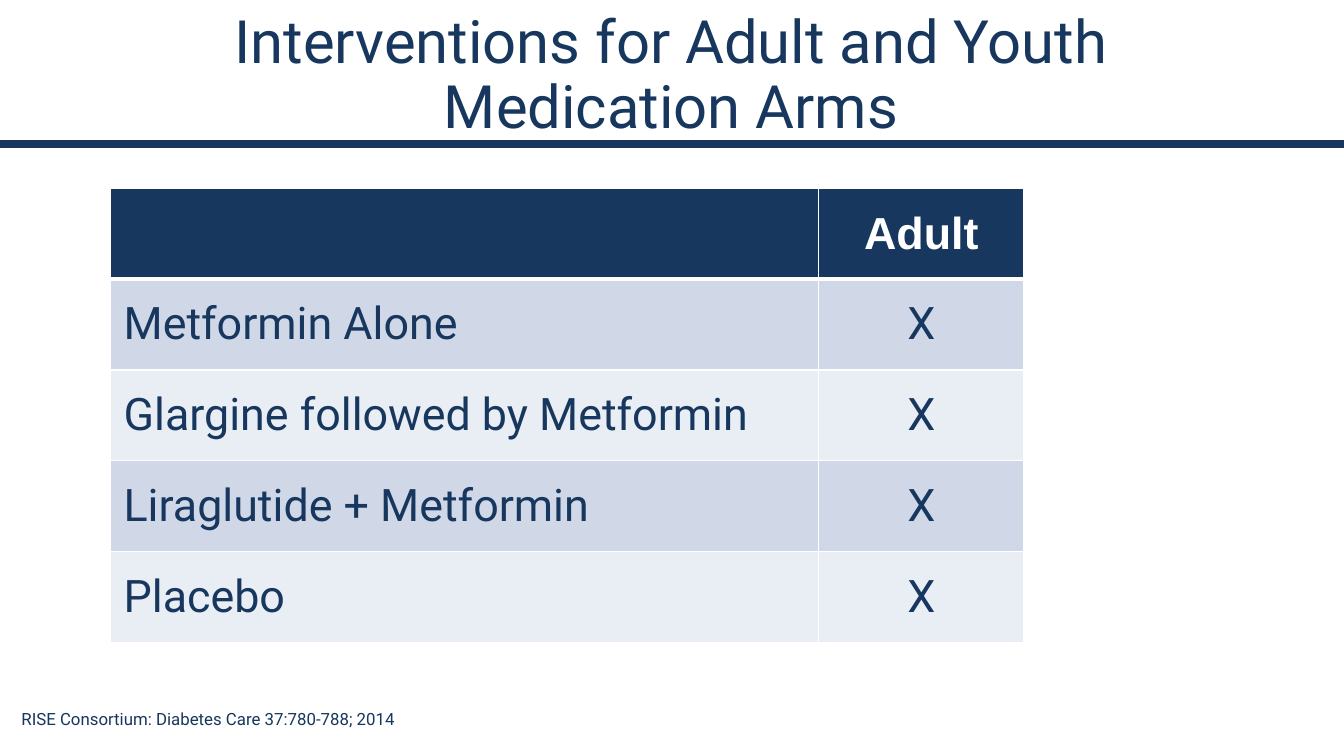
from lxml.etree import SubElement
from pptx import Presentation
from pptx.dml.color import RGBColor
from pptx.enum.shapes import MSO_CONNECTOR
from pptx.enum.text import MSO_ANCHOR, PP_ALIGN
from pptx.oxml.ns import qn
from pptx.util import Inches, Pt

TITLE = "Interventions for Adult and Youth Medication Arms"
SOURCE = "RISE Consortium: Diabetes Care 37:780-788; 2014"
ROWS = [
    ("", "Adult"),
    ("Metformin Alone", "X"),
    ("Glargine followed by Metformin", "X"),
    ("Liraglutide + Metformin", "X"),
    ("Placebo", "X"),
]
COL_WIDTHS = [5.27, 1.53]
TABLE_HEIGHT = 3.38
COLORS = {"navy": "17375E", "white": "FFFFFF", "odd": "D0D8E8", "even": "E9EDF4"}


def rgb(name):
    return RGBColor.from_string(COLORS[name])


def style(p, size, color="navy", font="Roboto", bold=False, align=PP_ALIGN.LEFT):
    p.alignment = align
    for r in p.runs:
        r.font.size = Pt(size)
        r.font.name = font
        r.font.bold = bold
        r.font.color.rgb = rgb(color)


def add_text(s, text, box, size, wrap=True, align=PP_ALIGN.LEFT):
    tf = s.shapes.add_textbox(*map(Inches, box)).text_frame
    tf.word_wrap = wrap
    tf.margin_left = tf.margin_right = Inches(0.08)
    tf.margin_top = tf.margin_bottom = Inches(0.04)
    tf.text = text
    style(tf.paragraphs[0], size, align=align)
    return tf


def add_borders(cell, widths):
    """Draw white cell edges; call before filling, as the schema puts lines first."""
    tcPr = cell._tc.get_or_add_tcPr()
    for side, width in widths.items():
        ln = SubElement(tcPr, qn(f"a:ln{side}"), w=str(Pt(width)))
        fill = SubElement(ln, qn("a:solidFill"))
        SubElement(fill, qn("a:srgbClr"), val=COLORS["white"])


def add_rule(s):
    rule = s.shapes.add_connector(
        MSO_CONNECTOR.STRAIGHT, 0, Inches(1.07), Inches(10.01), Inches(1.07))
    rule.line.color.rgb = rgb("navy")
    rule.line.width = Pt(4.5)
    SubElement(rule._element.spPr, qn("a:effectLst"))


def add_arms_table(s):
    table = s.shapes.add_table(
        len(ROWS), len(COL_WIDTHS), Inches(0.82), Inches(1.4),
        Inches(sum(COL_WIDTHS)), Inches(TABLE_HEIGHT)).table
    for column, width in zip(table.columns, COL_WIDTHS):
        column.width = Inches(width)
    for i, row in enumerate(ROWS):
        table.rows[i].height = Inches(TABLE_HEIGHT / len(ROWS))
        header = i == 0
        fill = "navy" if header else "odd" if i % 2 else "even"
        for j, text in enumerate(row):
            cell = table.cell(i, j)
            add_borders(cell, {"L": 1, "R": 1, "T": 3 if i == 1 else 1,
                               "B": 3 if header else 1})
            cell.fill.solid()
            cell.fill.fore_color.rgb = rgb(fill)
            cell.vertical_anchor = MSO_ANCHOR.MIDDLE
            cell.margin_left = cell.margin_right = Inches(0.1)
            cell.margin_top = cell.margin_bottom = Inches(0.04)
            cell.text_frame.text = text
            style(cell.text_frame.paragraphs[0], 24,
                  color="white" if header else "navy",
                  font="Arial" if header else "Roboto", bold=header,
                  align=PP_ALIGN.CENTER if j else PP_ALIGN.LEFT)


def main():
    prs = Presentation()
    prs.slide_width = Inches(10)
    prs.slide_height = prs.slide_width * 9 // 16
    s = prs.slides.add_slide(prs.slide_layouts[6])
    add_rule(s)
    title = add_text(s, TITLE, (0.64, 0.05, 8.71, 1.05), 32, align=PP_ALIGN.CENTER)
    title.paragraphs[0].line_spacing = 0.9
    add_text(s, SOURCE, (0.08, 5.23, 3.04, 0.24), 9, wrap=False)
    add_arms_table(s)
    prs.save("out.pptx")


if __name__ == "__main__":
    main()
